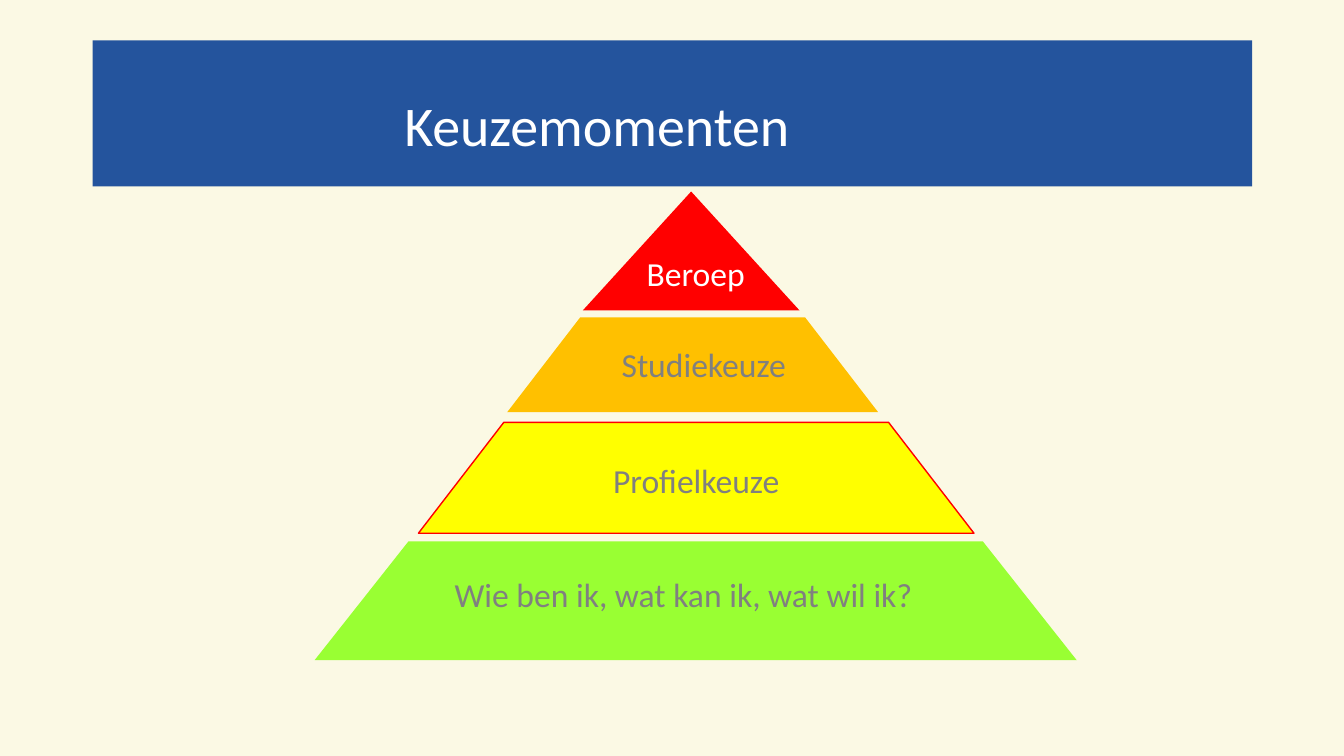
"""Build the slide 'Keuzemomenten': a four-level pyramid under a title banner."""
import pptx
import pptx.util
import pptx.dml.color
import pptx.enum.shapes
import pptx.enum.text

Inches = pptx.util.Inches
MSO_SHAPE = pptx.enum.shapes.MSO_SHAPE
PP_ALIGN = pptx.enum.text.PP_ALIGN
MSO_ANCHOR = pptx.enum.text.MSO_ANCHOR

COLORS = {
    "background": "FBF9E4", "banner": "24549D", "white": "FFFFFF", "grey": "808080",
    "green": "99FF33", "yellow": "FFFF00", "orange": "FFC000", "red": "FF0000",
}
TITLE = "Keuzemomenten"
BANNER_BOX = (0.92, 0.4, 11.5, 1.45)
TITLE_BOX = (3.91, 0.68, 7.27, 1.1)
LEVELS = [
    {"text": "Wie ben ik, wat kan ik, wat wil ik?", "box": (3.12, 5.37, 7.56, 1.18),
     "label": (4.41, 5.64, 5.11, 0.5), "slope": 0.79, "fill": "green", "align": PP_ALIGN.LEFT},
    {"text": "Profielkeuze", "box": (4.15, 4.19, 5.51, 1.1),
     "label": (4.39, 4.51, 5.03, 0.5), "slope": 0.77, "fill": "yellow", "line": "red"},
    {"text": "Studiekeuze", "box": (5.03, 3.15, 3.68, 0.94),
     "label": (4.46, 3.36, 5.04, 0.5), "slope": 0.77, "fill": "orange"},
    {"text": "Beroep", "box": (5.78, 1.9, 2.15, 1.18),
     "label": (4.46, 2.46, 4.88, 0.45), "fill": "red", "color": "white"},
]


def rgb(name):
    """Return the named colour."""
    return pptx.dml.color.RGBColor.from_string(COLORS[name])


def place(sp, box):
    """Move and size a shape in inches."""
    sp.left, sp.top, sp.width, sp.height = map(Inches, box)


def write(sp, text, size=24, color="grey", align=PP_ALIGN.CENTER, anchor=MSO_ANCHOR.TOP):
    """Put one formatted line of text in a shape."""
    tf = sp.text_frame
    tf.word_wrap = True
    tf.auto_size = pptx.enum.text.MSO_AUTO_SIZE.NONE
    tf.vertical_anchor = anchor
    p = tf.paragraphs[0]
    p.alignment = align
    r = p.add_run()
    r.text = text
    r.font.name = "Calibri"
    r.font.size = pptx.util.Pt(size)
    r.font.color.rgb = rgb(color)


def add_block(slide, kind, box, fill, line=None):
    """Add a filled preset shape, outlined only if a line colour is given."""
    sp = slide.shapes.add_shape(kind, *map(Inches, box))
    sp.shadow.inherit = False
    sp.fill.solid()
    sp.fill.fore_color.rgb = rgb(fill)
    if line:
        sp.line.color.rgb = rgb(line)
        sp.line.width = pptx.util.Pt(1)
    else:
        sp.line.fill.background()
    return sp


def add_level(slide, level):
    """Add one pyramid level with its label."""
    slope = level.get("slope")
    kind = MSO_SHAPE.TRAPEZOID if slope else MSO_SHAPE.ISOSCELES_TRIANGLE
    sp = add_block(slide, kind, level["box"], level["fill"], level.get("line"))
    if slope:
        sp.adjustments[0] = slope
    label = slide.shapes.add_textbox(*map(Inches, level["label"]))
    write(label, level["text"], color=level.get("color", "grey"),
          align=level.get("align", PP_ALIGN.CENTER))


def main():
    """Create and save the presentation."""
    prs = pptx.Presentation()
    prs.slide_width, prs.slide_height = Inches(13.33), Inches(7.5)
    slide = prs.slides.add_slide(prs.slide_layouts[5])
    slide.background.fill.solid()
    slide.background.fill.fore_color.rgb = rgb("background")
    title = slide.shapes.title
    banner = add_block(slide, MSO_SHAPE.RECTANGLE, BANNER_BOX, "banner")
    title._element.addprevious(banner._element)
    place(title, TITLE_BOX)
    write(title, TITLE, size=40, color="white", align=PP_ALIGN.LEFT, anchor=MSO_ANCHOR.MIDDLE)
    for level in LEVELS:
        add_level(slide, level)
    prs.save("out.pptx")


if __name__ == "__main__":
    main()
